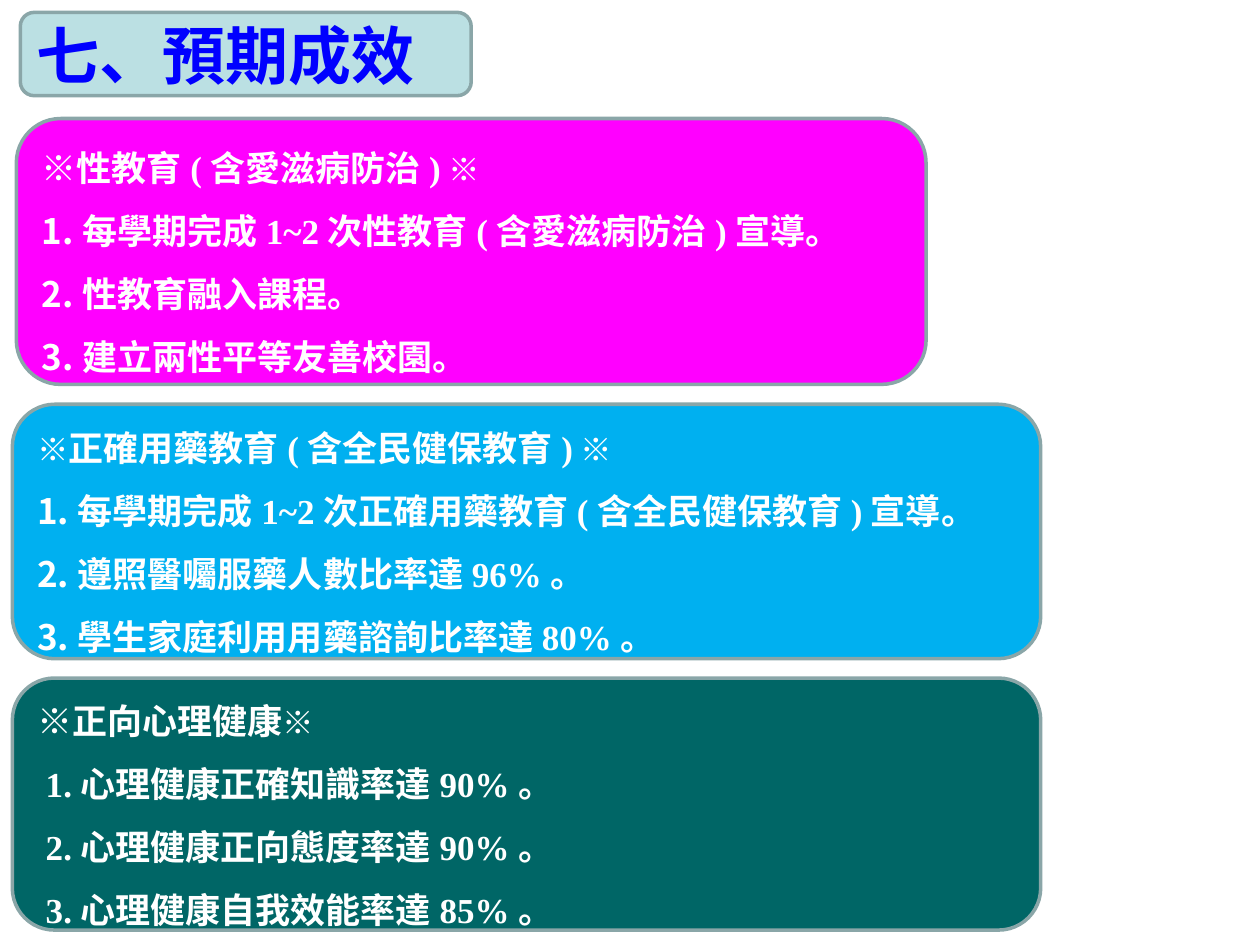
import pptx
import pptx.util
import pptx.dml.color
import pptx.enum.shapes
import pptx.enum.text
import lxml.etree
from pptx.oxml.ns import qn

Cm, Pt = pptx.util.Cm, pptx.util.Pt
SANS, TRAD, SERIF = "Noto Sans CJK SC", "Noto Sans CJK TC", "Times New Roman"


def color(code):
    return pptx.dml.color.RGBColor.from_string(code)


def add_box(slide, place, fill, lines, ink, space):
    """Add a rounded box; each line is a list of (text, size, font)."""
    box = slide.shapes.add_shape(
        pptx.enum.shapes.MSO_SHAPE.ROUNDED_RECTANGLE, *[Cm(n) for n in place])
    box.shadow.inherit = False
    box.fill.solid()
    box.fill.fore_color.rgb = color(fill)
    box.line.color.rgb = color("8AA6A8")
    box.line.width = Pt(2)
    frame = box.text_frame
    frame.word_wrap = True
    frame.vertical_anchor = pptx.enum.text.MSO_ANCHOR.MIDDLE
    for i, line in enumerate(lines):
        para = frame.add_paragraph() if i else frame.paragraphs[0]
        para.alignment = pptx.enum.text.PP_ALIGN.LEFT
        para.line_spacing = space
        para.font.bold = True
        para.font.color.rgb = color(ink)
        for text, size, face in line:
            run = para.add_run()
            run.text = text
            run.font.size = Pt(size)
            run.font.name = face
            # East Asian glyphs need their own typeface
            east = lxml.etree.SubElement(run.font._element, qn("a:ea"))
            east.set("typeface", TRAD if face == SERIF else face)


deck = pptx.Presentation()
deck.slide_width, deck.slide_height = Cm(25.4), Cm(19.05)
slide = deck.slides.add_slide(deck.slide_layouts[6])

# Title
add_box(slide, (0.41, 0.25, 9.09, 1.68), "BBE0E3",
        [[("七、預期成效", 36, SANS)]], "0000FF", 1.0)

# Topics: place, fill, size of first mark, heading, last mark, number font, goals
topics = [
    ((0.33, 2.39, 18.34, 5.36), "FF00FF", 20, "性教育(含愛滋病防治)", " ※", SANS,
     ["1.每學期完成1~2次性教育(含愛滋病防治)宣導。",
      "2.性教育融入課程。",
      "3.建立兩性平等友善校園。"]),
    ((0.25, 8.15, 20.73, 5.13), "00B0F0", 18, "正確用藥教育(含全民健保教育)", " ※", SANS,
     ["1.每學期完成1~2次正確用藥教育(含全民健保教育)宣導。",
      "2.遵照醫囑服藥人數比率達96%。",
      "3.學生家庭利用用藥諮詢比率達80%。"]),
    ((0.25, 13.67, 20.73, 5.08), "006666", 20, "正向心理健康", "※", SERIF,
     [" 1.心理健康正確知識率達90%。",
      " 2.心理健康正向態度率達90%。",
      " 3.心理健康自我效能率達85%。"]),
]
for place, fill, size, head, mark, face, goals in topics:
    lines = [[("※", size, SANS), (head, 20, SERIF), (mark, 18, TRAD)]]
    for goal in goals:
        num, dot, rest = goal.partition(".")
        lines.append([(num + dot, 20, face), (rest, 20, SERIF)])
    add_box(slide, place, fill, lines, "FFFFFF", 1.5)

deck.save("out.pptx")
